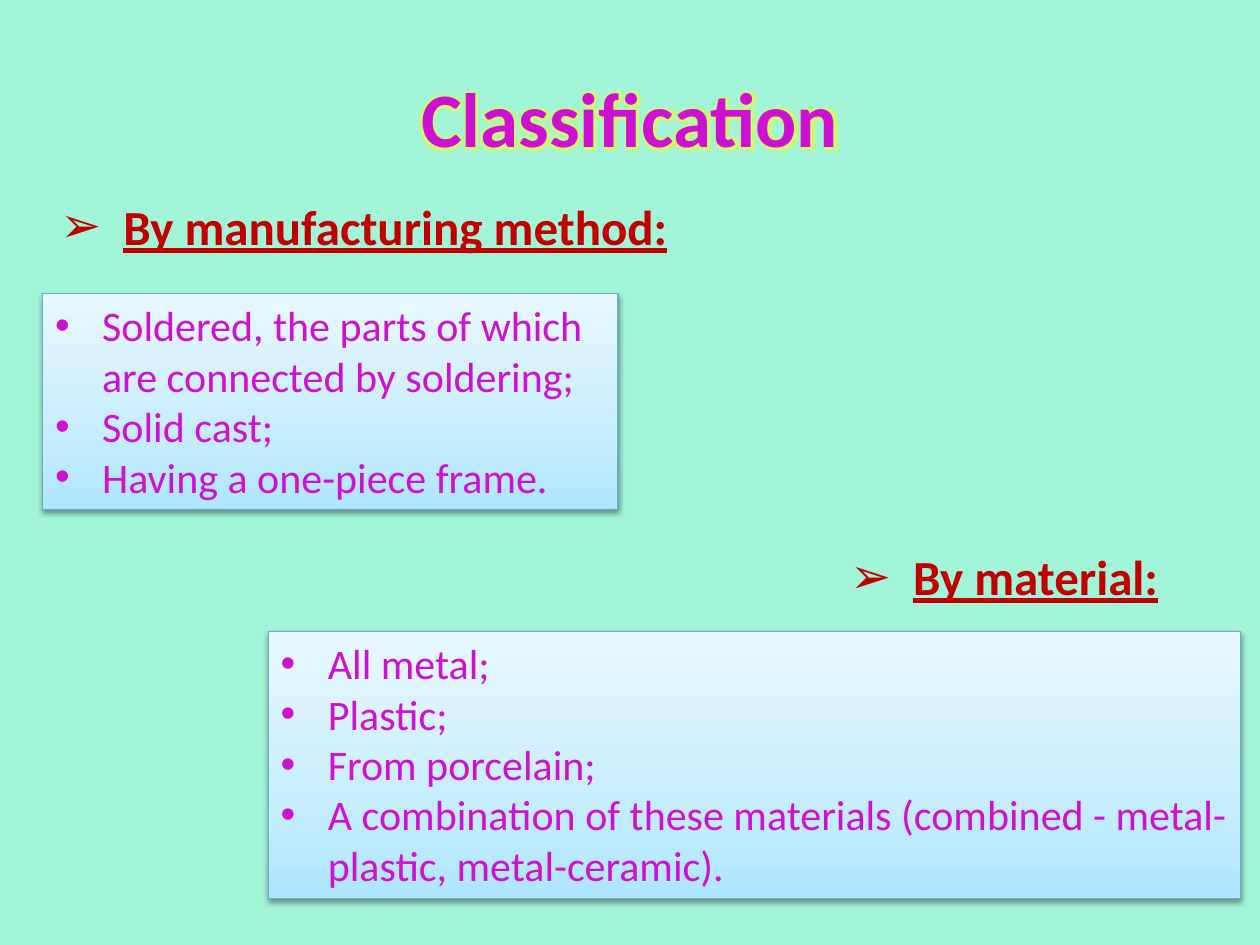
from dataclasses import dataclass

from lxml.etree import SubElement
from pptx import Presentation
from pptx.dml.color import RGBColor
from pptx.enum.shapes import MSO_SHAPE
from pptx.enum.text import MSO_ANCHOR, MSO_AUTO_SIZE, PP_ALIGN
from pptx.oxml import parse_xml
from pptx.oxml.ns import nsdecls, qn
from pptx.util import Cm, Pt


@dataclass(frozen=True)
class Theme:
    font: str = "Calibri"
    bullet_font: str = "Arial"
    background: str = "A3F5D9"
    accent: str = "CD10D2"
    heading: str = "C00000"
    outline: str = "44008A"
    glow: str = "FFFF00"
    border: str = "66AEC7"
    gradient: tuple = ((0, "AEE6FF"), (35, "C6EDFF"), (100, "E9F8FF"))
    title_size: int = 44
    heading_size: int = 28
    body_size: int = 24


THEME = Theme()
TITLE_FORMAT = {"size": Pt(THEME.title_size), "bold": True}
HEADING_FORMAT = {"size": Pt(THEME.heading_size), "bold": True, "underline": True}
BODY_FORMAT = {"size": Pt(THEME.body_size), "bold": False}


def xml(tag, attrs, inner):
    return parse_xml(f"<a:{tag} {nsdecls('a')} {attrs}>{inner}</a:{tag}>")


def solid(color, alpha=100):
    return (f'<a:srgbClr val="{color}">'
            f'<a:alpha val="{alpha * 1000}"/></a:srgbClr>')


def add_run(p, text, color, formats):
    r = p.add_run()
    r.text = text
    r.font.name = THEME.font
    r.font.color.rgb = RGBColor.from_string(color)
    for name, value in formats.items():
        setattr(r.font, name, value)
    return r


def set_bullet(p, char, indent):
    pPr = p._p.get_or_add_pPr()
    pPr.set("marL", str(indent))
    pPr.set("indent", str(-indent))
    SubElement(pPr, qn("a:buFont"), typeface=THEME.bullet_font)
    SubElement(pPr, qn("a:buChar"), char=char)


def add_title(s, text, box):
    """Title placeholder with outlined, glowing letters."""
    sp = s.shapes.title
    sp.left, sp.top, sp.width, sp.height = map(Cm, box)
    tf = sp.text_frame
    tf.vertical_anchor = MSO_ANCHOR.MIDDLE
    p = tf.paragraphs[0]
    p.alignment = PP_ALIGN.CENTER
    rPr = add_run(p, text, THEME.accent, TITLE_FORMAT)._r.get_or_add_rPr()
    rPr.insert(0, xml("ln", f'w="{Pt(1)}"',
                      f"<a:solidFill>{solid(THEME.outline)}</a:solidFill>"))
    glow = f'<a:glow rad="{Pt(5)}">{solid(THEME.glow, 50)}</a:glow>'
    rPr.find(qn("a:solidFill")).addnext(xml("effectLst", "", glow))


def add_heading(s, text, box):
    """Underlined heading with an arrow bullet."""
    tf = s.shapes.add_textbox(*map(Cm, box)).text_frame
    tf.word_wrap = False
    tf.auto_size = MSO_AUTO_SIZE.SHAPE_TO_FIT_TEXT
    p = tf.paragraphs[0]
    set_bullet(p, "➢", Cm(1.27))
    add_run(p, text, THEME.heading, HEADING_FORMAT)


def style_panel(sp):
    """Vertical gradient, thin border and soft shadow."""
    sp.line.color.rgb = RGBColor.from_string(THEME.border)
    sp.line.width = Pt(0.75)
    stops = "".join(f'<a:gs pos="{pos * 1000}">{solid(color)}</a:gs>'
                    for pos, color in THEME.gradient)
    spPr = sp._element.spPr
    spPr.find(qn("a:ln")).addprevious(xml(
        "gradFill", 'rotWithShape="1"',
        f'<a:gsLst>{stops}</a:gsLst><a:lin ang="16200000" scaled="0"/>'))
    spPr.append(xml(
        "effectLst", "",
        f'<a:outerShdw blurRad="{Pt(3.1)}" dist="{Pt(1.6)}" dir="5400000" '
        f'rotWithShape="0">{solid("000000", 38)}</a:outerShdw>'))


def add_list_panel(s, items, box):
    """Shaded panel holding a bulleted list."""
    sp = s.shapes.add_shape(MSO_SHAPE.RECTANGLE, *map(Cm, box))
    style_panel(sp)
    tf = sp.text_frame
    tf.word_wrap = True
    tf.auto_size = MSO_AUTO_SIZE.SHAPE_TO_FIT_TEXT
    tf.vertical_anchor = MSO_ANCHOR.TOP
    for i, item in enumerate(items):
        p = tf.add_paragraph() if i else tf.paragraphs[0]
        p.alignment = PP_ALIGN.LEFT
        set_bullet(p, "•", Cm(0.95))
        add_run(p, item, THEME.accent, BODY_FORMAT)


# Each section: heading, heading box, items, panel box (cm)
SECTIONS = [
    ("By manufacturing method:", (0.97, 3.84, 13, 1.45),
     ["Soldered, the parts of which are connected by soldering;",
      "Solid cast;",
      "Having a one-piece frame."],
     (0.86, 5.92, 11.6, 4.36)),
    ("By material:", (16.89, 10.9, 6.8, 1.45),
     ["All metal;",
      "Plastic;",
      "From porcelain;",
      "A combination of these materials (combined - metal-plastic, metal-ceramic)."],
     (5.41, 12.73, 19.6, 5.39)),
]


def main():
    prs = Presentation()
    prs.slide_width, prs.slide_height = Cm(25.4), Cm(19.05)
    s = prs.slides.add_slide(prs.slide_layouts[5])
    fill = s.background.fill
    fill.solid()
    fill.fore_color.rgb = RGBColor.from_string(THEME.background)

    add_title(s, "Classification", (1.27, 0.76, 22.86, 3.18))
    for heading, heading_box, items, panel_box in SECTIONS:
        add_heading(s, heading, heading_box)
        add_list_panel(s, items, panel_box)
    prs.save("out.pptx")


if __name__ == "__main__":
    main()
